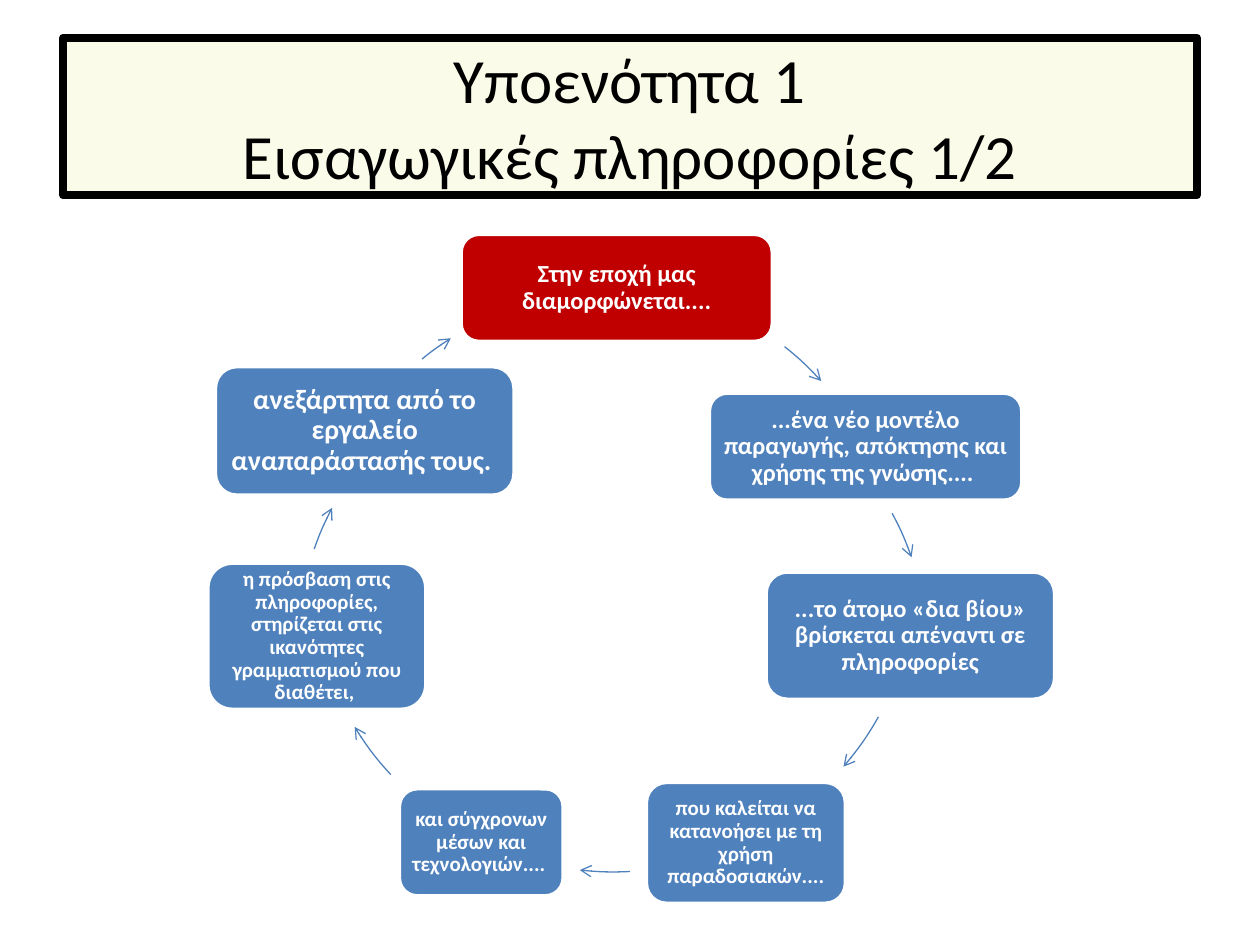
from math import cos, radians, sin

from lxml import etree
from pptx import Presentation
from pptx.dml.color import RGBColor
from pptx.enum.shapes import MSO_SHAPE
from pptx.enum.text import MSO_ANCHOR, PP_ALIGN
from pptx.oxml.ns import qn
from pptx.util import Inches, Pt

RECT, ROUNDED = MSO_SHAPE.RECTANGLE, MSO_SHAPE.ROUNDED_RECTANGLE
MIDDLE, CENTER = MSO_ANCHOR.MIDDLE, PP_ALIGN.CENTER

FONT = "Calibri"
COLORS = {"red": "C00000", "blue": "4F81BD", "white": "FFFFFF",
          "cream": "FBFBE9", "black": "000000"}

TITLE = "Υποενότητα 1\vΕισαγωγικές πληροφορίες 1/2"

# Cycle steps: text, (left, top, width, height), fill, font size, inset
STEPS = [
    ("Στην εποχή μας διαμορφώνεται....", (3.66, 1.86, 2.47, 0.85), "red", 14, 0.06),
    ("...ένα νέο μοντέλο παραγωγής, απόκτησης και χρήσης της γνώσης.... ",
     (5.63, 3.12, 2.48, 0.85), "blue", 14, 0.06),
    ("...το άτομο «δια βίου» βρίσκεται απέναντι σε πληροφορίες",
     (6.08, 4.54, 2.29, 1.01), "blue", 14, 0.06),
    ("που καλείται να κατανοήσει με τη χρήση παραδοσιακών....",
     (5.13, 6.21, 1.58, 0.96), "blue", 12, 0.05),
    ("και σύγχρονων μέσων και τεχνολογιών.... ",
     (3.17, 6.26, 1.3, 0.85), "blue", 12, 0.05),
    ("η πρόσβαση στις πληροφορίες, στηρίζεται στις ικανότητες γραμματισμού που διαθέτει, ",
     (1.65, 4.47, 1.73, 1.16), "blue", 12, 0.05),
    ("ανεξάρτητα από το εργαλείο αναπαράστασής τους. ",
     (1.71, 2.91, 2.37, 1.02), "blue", 16, 0.07),
]

# Arrows between steps: left and top of the circle, start and end angle
# (degrees, clockwise from the right)
DIAMETER = 4.82
ARCS = [
    (2.32, 2.23, 308.4, 317.9),
    (2.55, 2.81, 331.6, 340.7),
    (2.46, 2.1, 29.3, 40.8),
    (2.46, 2.1, 86.9, 96.4),
    (2.46, 2.1, 137.2, 148.5),
    (2.36, 2.74, 199.2, 207.7),
    (2.46, 2.31, 230.9, 237.6),
]
CORNER_INSET = 0.29 * 0.1667  # text inset of a rounded corner, per unit of height


def rgb(name):
    return RGBColor.from_string(COLORS[name])


def add_box(slide, kind, box, text, fill, line, line_width, size, color, bold=False):
    sp = slide.shapes.add_shape(kind, *map(Inches, box))
    sp.shadow.inherit = False
    sp.fill.solid()
    sp.fill.fore_color.rgb = rgb(fill)
    sp.line.color.rgb = rgb(line)
    sp.line.width = Pt(line_width)
    tf = sp.text_frame
    tf.word_wrap = True
    tf.vertical_anchor = MIDDLE
    tf.text = text
    p = tf.paragraphs[0]
    p.alignment = CENTER
    p.font.name, p.font.size, p.font.bold = FONT, Pt(size), bold
    p.font.color.rgb = rgb(color)
    return tf


def add_step(slide, text, box, fill, size, inset):
    tf = add_box(slide, ROUNDED, box, text, fill, "white", 2, size, "white", True)
    tf.paragraphs[0].line_spacing = 0.9
    margin = Inches(max(0, inset - CORNER_INSET * box[3]))
    tf.margin_left = tf.margin_right = tf.margin_top = tf.margin_bottom = margin


def add_arc(slide, left, top, start, end):
    # The frame spans the whole circle, the outline only the arc
    builder = slide.shapes.build_freeform(Inches(left), Inches(top))
    builder.add_line_segments([(Inches(left + DIAMETER), Inches(top + DIAMETER))],
                              close=False)
    sp = builder.convert_to_shape()
    outline = next(sp._element.iter(qn("a:path")))
    for child in list(outline):
        outline.remove(child)
    radius = Inches(DIAMETER / 2)
    move = etree.SubElement(outline, qn("a:moveTo"))
    etree.SubElement(move, qn("a:pt"),
                     x=str(round(radius * (1 + cos(radians(start))))),
                     y=str(round(radius * (1 + sin(radians(start))))))
    etree.SubElement(outline, qn("a:arcTo"), wR=str(radius), hR=str(radius),
                     stAng=str(round(start * 60000)),
                     swAng=str(round((end - start) * 60000)))
    sp.shadow.inherit = False
    sp.fill.background()
    sp.line.color.rgb = rgb("blue")
    sp.line.width = Pt(0.75)
    ln = sp.line._get_or_add_ln()
    etree.SubElement(ln, qn("a:tailEnd"), type="arrow")


prs = Presentation()
prs.slide_width, prs.slide_height = Inches(10), Inches(7.5)
slide = prs.slides.add_slide(prs.slide_layouts[6])

# Cycle of steps, each followed by its arrow
for step, arc in zip(STEPS, ARCS):
    add_step(slide, *step)
    add_arc(slide, *arc)

# Title
add_box(slide, RECT, (0.5, 0.3, 9, 1.25), TITLE, "cream", "black", 4.5, 36, "black")

prs.save("out.pptx")
